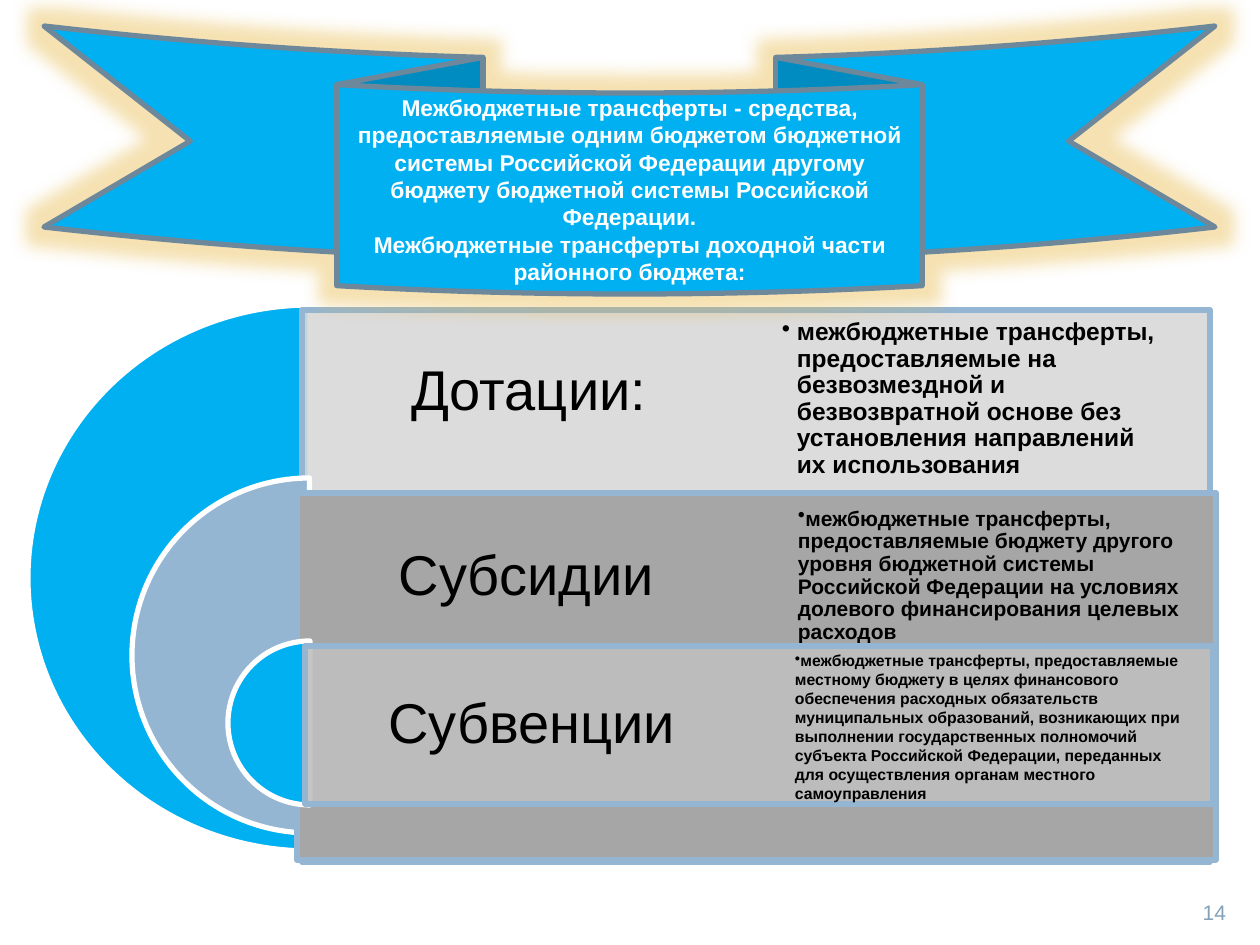
from lxml.etree import SubElement
from pptx import Presentation
from pptx.dml.color import RGBColor
from pptx.enum.shapes import MSO_SHAPE
from pptx.enum.text import MSO_ANCHOR, PP_ALIGN
from pptx.oxml.ns import qn
from pptx.util import Pt

EMU_PER_INCH = 914400
PX_PER_INCH = 126
COLORS = {
    "blue": "00B0F0", "steel": "94B6D2", "white": "FFFFFF", "black": "000000",
    "light": "D9D9D9", "dark": "A6A6A6", "middle": "BFBFBF",
    "ribbon_edge": "6D879B", "glow": "E7B53D", "number": "83A1B9",
}
TIERS = [
    {
        "bar": (302, 310, 908, 552), "fill": "light", "alpha": 90,
        "disc": (-274, -5, 564, 546), "disc_fill": "blue",
        "label": "Дотации:", "label_height": 165,
        "description": (446, 7), "size": 14, "hanging": 15, "spacing": 0.9,
        "text": "межбюджетные трансферты, предоставляемые на безвозмездной и "
                "безвозвратной основе без установления направлений их использования",
    },
    {
        "bar": (297, 493, 919, 367), "fill": "dark", "alpha": 100,
        "disc": (-165, -15, 355, 355), "disc_fill": "steel",
        "label": "Субсидии", "label_height": 169,
        "description": (467, 1), "size": 12, "hanging": 0, "spacing": 0.9,
        "text": "межбюджетные трансферты, предоставляемые бюджету другого уровня "
                "бюджетной системы Российской Федерации на условиях долевого "
                "финансирования целевых расходов",
    },
    {
        "bar": (305, 646, 908, 158), "fill": "middle", "alpha": 90,
        "disc": (-77, -5, 164, 164), "disc_fill": "blue",
        "label": "Субвенции", "label_height": 158,
        "description": (456, -1), "size": 9, "hanging": 0, "spacing": 1.0,
        "text": "межбюджетные трансферты, предоставляемые местному бюджету в целях "
                "финансового обеспечения расходных обязательств муниципальных "
                "образований, возникающих при выполнении государственных полномочий "
                "субъекта Российской Федерации, переданных для осуществления органам "
                "местного самоуправления",
    },
]
RIBBON_TEXT = [
    "Межбюджетные трансферты - средства, предоставляемые одним бюджетом бюджетной "
    "системы Российской Федерации другому бюджету бюджетной системы Российской Федерации.",
    "Межбюджетные трансферты доходной части районного бюджета:",
]


def px(value):
    """Turn px into EMU."""
    return round(value * EMU_PER_INCH / PX_PER_INCH)


def add_shape(slide, kind, box, fill, line, alpha=100):
    """Add a flat preset shape with a 3 pt outline."""
    shape = slide.shapes.add_shape(kind, *map(px, box))
    shape.shadow.inherit = False
    shape.fill.solid()
    shape.fill.fore_color.rgb = RGBColor.from_string(COLORS[fill])
    shape.line.color.rgb = RGBColor.from_string(COLORS[line])
    shape.line.width = Pt(3)
    if alpha < 100:
        color = shape.fill._xPr.find(qn("a:solidFill"))[0]
        SubElement(color, qn("a:alpha"), val=str(alpha * 1000))
    return shape


def write_text(shape, paragraphs, size, color="black", bold=False, align=PP_ALIGN.LEFT,
               spacing=1.0, margins=(13, 0), bullet=False, hanging=0):
    """Fill a shape with formatted paragraphs."""
    frame = shape.text_frame
    frame.word_wrap = True
    frame.vertical_anchor = MSO_ANCHOR.MIDDLE
    frame.margin_left = frame.margin_right = px(margins[0])
    frame.margin_top = frame.margin_bottom = px(margins[1])
    for index, text in enumerate(paragraphs):
        paragraph = frame.add_paragraph() if index else frame.paragraphs[0]
        paragraph.alignment = align
        paragraph.line_spacing = spacing
        run = paragraph.add_run()
        run.text = text
        run.font.name = "Arial"
        run.font.size = Pt(size)
        run.font.bold = bold
        run.font.color.rgb = RGBColor.from_string(COLORS[color])
        if bullet:
            properties = paragraph._p.get_or_add_pPr()
            properties.set("marL", str(px(hanging)))
            properties.set("indent", str(-px(hanging)))
            SubElement(properties, qn("a:buChar"), char="•")


def add_text(slide, box, paragraphs, size, **text_format):
    """Add a text box with formatted paragraphs."""
    write_text(slide.shapes.add_textbox(*map(px, box)), paragraphs, size, **text_format)


def add_tier(slide, box, tier):
    """Place the half disc, bar, label and description of one transfer type."""
    left, top, width, height = box
    disc_left, disc_top, disc_width, disc_height = tier["disc"]
    disc = add_shape(slide, MSO_SHAPE.PIE,
                     (left + disc_left, top + disc_top, disc_width, disc_height),
                     tier["disc_fill"], "white")
    disc.adjustments[0] = 54
    disc.adjustments[1] = 162
    add_shape(slide, MSO_SHAPE.RECTANGLE, box, tier["fill"], "steel", tier["alpha"])
    add_text(slide, (left, top, width // 2, tier["label_height"]), [tier["label"]], 32,
             align=PP_ALIGN.CENTER, spacing=0.9, margins=(16, 16))
    offset_left, offset_top = tier["description"]
    add_text(slide, (left + offset_left, top + offset_top, width // 2, 164),
             [tier["text"]], tier["size"], bold=True, spacing=tier["spacing"],
             margins=(34, 0), bullet=True, hanging=tier["hanging"])


def add_ribbon(slide, box):
    """Place the glowing ribbon with the definition."""
    ribbon = add_shape(slide, MSO_SHAPE.CURVED_DOWN_RIBBON, box, "blue", "ribbon_edge")
    effects = ribbon._element.spPr.find(qn("a:effectLst"))
    glow = SubElement(effects, qn("a:glow"), rad=str(px(32)))
    color = SubElement(glow, qn("a:srgbClr"), val=COLORS["glow"])
    SubElement(color, qn("a:alpha"), val="40000")
    write_text(ribbon, RIBBON_TEXT, 13, color="white", bold=True, align=PP_ALIGN.CENTER)


def main():
    """Build the slide about intergovernmental transfers."""
    presentation = Presentation()
    presentation.slide_width = px(1260)
    presentation.slide_height = px(945)
    slide = presentation.slides.add_slide(presentation.slide_layouts[6])
    for tier in TIERS:
        add_tier(slide, tier["bar"], tier)
    add_ribbon(slide, (44, 26, 1171, 268))
    add_text(slide, (1134, 895, 105, 34), ["14"], 12, color="number", align=PP_ALIGN.RIGHT)
    presentation.save("out.pptx")


if __name__ == "__main__":
    main()
